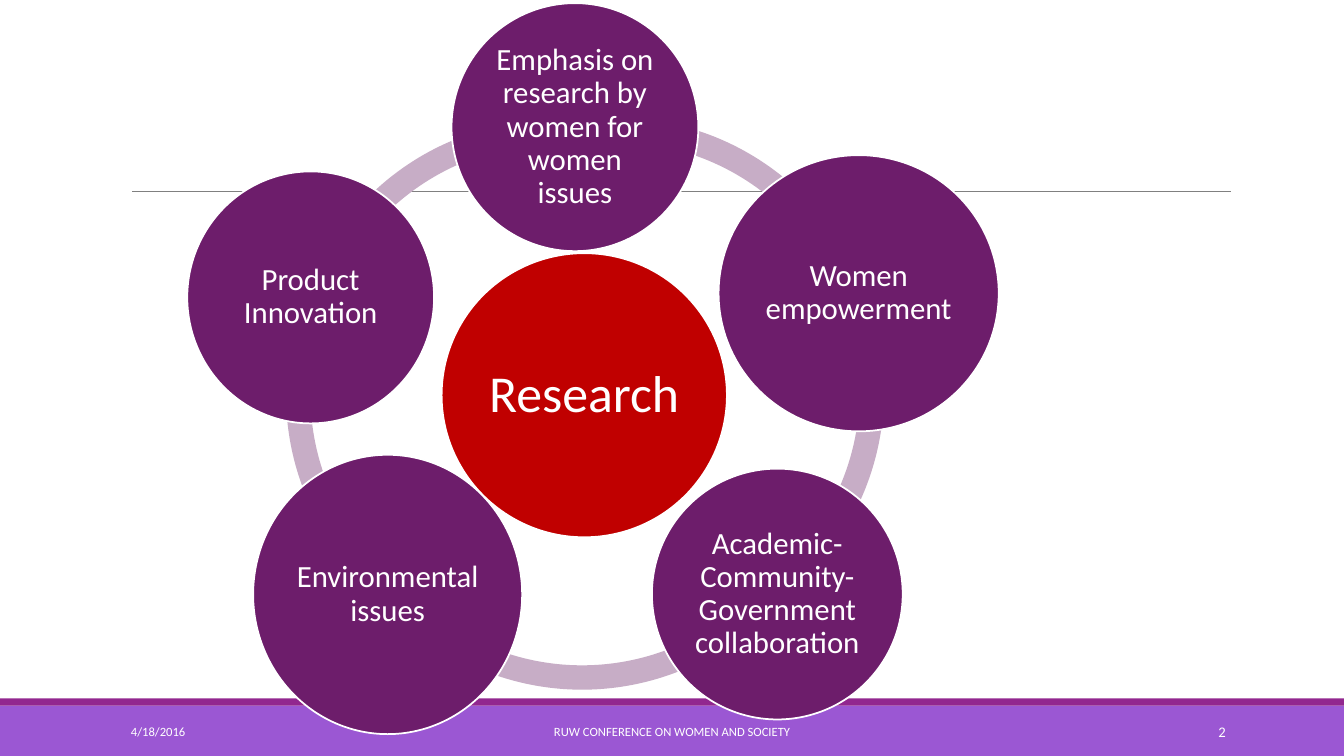
from typing import NamedTuple

import pptx
import pptx.util
import pptx.dml.color
import pptx.enum.shapes
import pptx.enum.text
import pptx.oxml

Cm = pptx.util.Cm
Pt = pptx.util.Pt
Kind = pptx.enum.shapes.MSO_SHAPE
Align = pptx.enum.text.PP_ALIGN

COLORS = {
    "white": "FFFFFF", "violet": "9B57D3", "plum": "92278F", "rule": "808080",
    "ring": "C7ADC6", "theme": "6D1D6B", "core": "C00000",
}
WIDE, HIGH = 33.87, 19.05
RING = 13.34


class Arc(NamedTuple):
    left: float
    top: float
    start: float
    end: float


class Disc(NamedTuple):
    text: str
    left: float
    top: float
    width: float
    height: float
    color: str = "theme"
    size: float = 22
    inset: float = 0.08


class Note(NamedTuple):
    text: str
    left: float
    width: float
    align: Align
    size: float


ARCS = [
    Arc(7.32, 3.02, 119.734, 164.814),
    Arc(7.21, 3.28, 77.55, 121.13),
    Arc(8, 4.04, 24.563, 83.437),
    Arc(8.94, 3.18, 202.761, 31.324),
    Arc(8.86, 2.97, 156.576, 203.911),
]
DISCS = [
    Disc("Research", 11.13, 6.38, 7.19, 7.16, "core", 37, 0.13),
    Disc("Emphasis on research by women for women issues", 11.38, 0.08, 6.22, 6.25),
    Disc("Women empowerment", 18.11, 3.91, 7.06, 6.96),
    Disc("Academic- Community- Government collaboration", 16.43, 11.81, 6.32, 6.32),
    Disc("Environmental issues", 6.38, 11.46, 6.78, 7.04),
    Disc("Product Innovation", 4.72, 4.32, 6.22, 6.35),
]
NOTES = [
    Note("4/18/2016", 3.05, 6.86, Align.LEFT, 9),
    Note("RUW CONFERENCE ON WOMEN AND SOCIETY", 10.24, 13.39, Align.CENTER, 9),
    Note("2", 27.51, 3.63, Align.RIGHT, 10.5),
]


def tint(name: str) -> pptx.dml.color.RGBColor:
    return pptx.dml.color.RGBColor.from_string(COLORS[name])


def add_form(slide, kind: Kind, left: float, top: float, width: float,
             height: float, color: str):
    """Add a flat filled shape without an outline."""
    form = slide.shapes.add_shape(kind, Cm(left), Cm(top), Cm(width), Cm(height))
    form.shadow.inherit = False
    form.fill.solid()
    form.fill.fore_color.rgb = tint(color)
    form.line.fill.background()
    return form


def set_text(shape, text: str, size: float, align: Align):
    """Write one white, vertically centred paragraph into the shape."""
    frame = shape.text_frame
    frame.word_wrap = True
    frame.vertical_anchor = pptx.enum.text.MSO_ANCHOR.MIDDLE
    para = frame.paragraphs[0]
    para.text = text
    para.alignment = align
    para.font.name = "Calibri"
    para.font.size = Pt(size)
    para.font.color.rgb = tint("white")
    return frame


def add_rule(slide) -> None:
    rule = slide.shapes.add_connector(
        pptx.enum.shapes.MSO_CONNECTOR.STRAIGHT, Cm(3.33), Cm(4.83), Cm(31.01), Cm(4.83))
    rule.line.color.rgb = tint("rule")
    rule.line.width = Pt(0.5)
    props = rule.element.spPr
    props.append(props.makeelement(pptx.oxml.ns.qn("a:effectLst"), {}))


def add_arc(slide, arc: Arc) -> None:
    form = add_form(slide, Kind.BLOCK_ARC, arc.left, arc.top, RING, RING, "ring")
    for index, value in enumerate((arc.start, arc.end, 0.046)):
        form.adjustments[index] = value


def add_disc(slide, disc: Disc) -> None:
    form = add_form(slide, Kind.OVAL, disc.left, disc.top, disc.width,
                    disc.height, disc.color)
    form.line.color.rgb = tint("white")
    form.line.width = Pt(1.25)
    frame = set_text(form, disc.text, disc.size, Align.CENTER)
    frame.margin_left = frame.margin_right = Cm(disc.inset)
    frame.margin_top = frame.margin_bottom = Cm(disc.inset)
    frame.paragraphs[0].line_spacing = 0.9


def add_note(slide, note: Note) -> None:
    box = slide.shapes.add_textbox(Cm(note.left), Cm(17.93), Cm(note.width), Cm(1.02))
    set_text(box, note.text, note.size, note.align)


def main() -> None:
    deck = pptx.Presentation()
    deck.slide_width, deck.slide_height = Cm(WIDE), Cm(HIGH)
    slide = deck.slides.add_slide(deck.slide_layouts[6])
    add_form(slide, Kind.RECTANGLE, 0, 17.78, WIDE, 1.27, "violet")
    add_form(slide, Kind.RECTANGLE, 0, 17.6, WIDE, 0.18, "plum")
    add_rule(slide)
    for arc in ARCS:
        add_arc(slide, arc)
    for disc in DISCS:
        add_disc(slide, disc)
    for note in NOTES:
        add_note(slide, note)
    deck.save("out.pptx")


if __name__ == "__main__":
    main()
